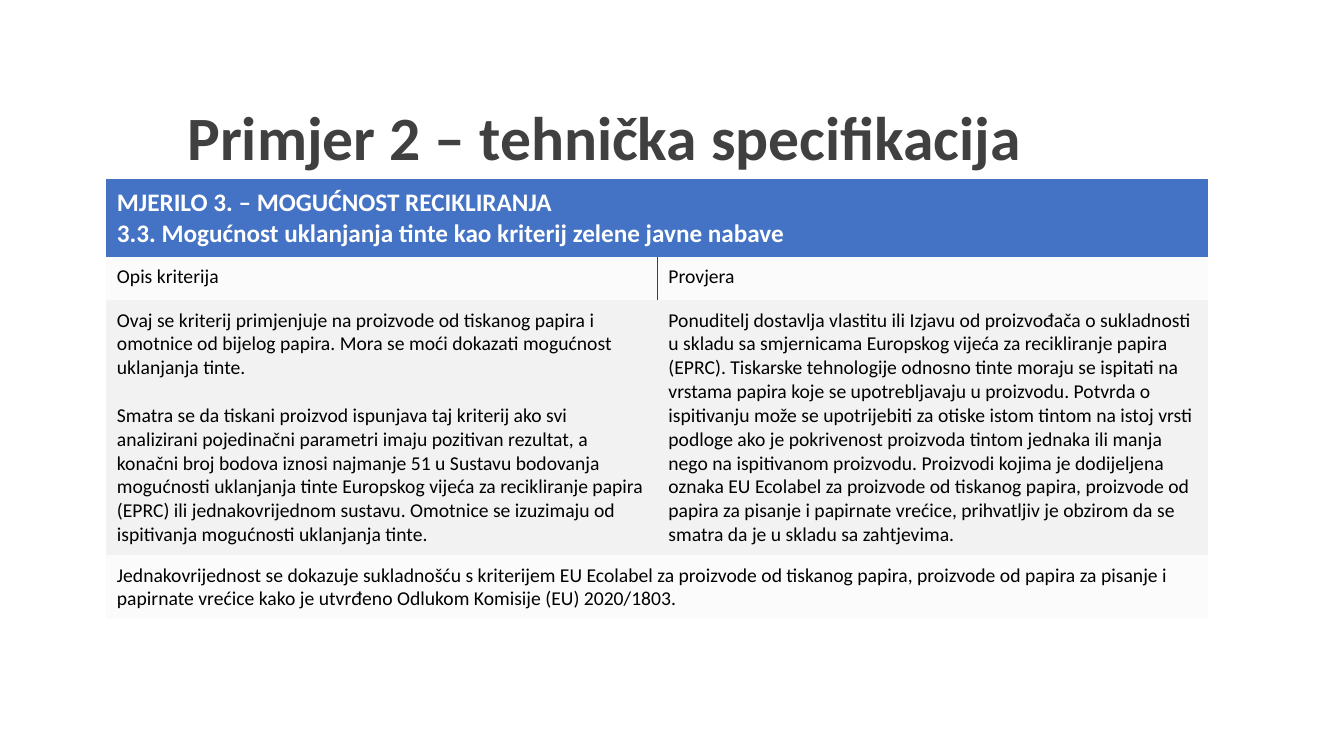
from lxml import etree
from pptx import Presentation
from pptx.dml.color import RGBColor
from pptx.enum.text import MSO_ANCHOR
from pptx.oxml.ns import qn
from pptx.util import Inches, Pt

MIDDLE, TOP = MSO_ANCHOR.MIDDLE, MSO_ANCHOR.TOP
FONT = "Calibri"
NO_GRID_STYLE = "{2D5ABB26-0587-4C30-8999-92F81FD0307C}"
COLORS = {
    "title": "404040",
    "header": "4472C4",
    "header_text": "FFFFFF",
    "band": "F2F2F2",
    "text": "000000",
    "divider": "404040",
}

# Content: each row is a list of cells, each cell a list of paragraphs
TITLE = "Primjer 2 – tehnička specifikacija"
ROWS = [
    [["MJERILO 3. – MOGUĆNOST RECIKLIRANJA",
      "3.3. Mogućnost uklanjanja tinte kao kriterij zelene javne nabave"]],
    [["Opis kriterija"], ["Provjera"]],
    [["Ovaj se kriterij primjenjuje na proizvode od tiskanog papira i omotnice "
      "od bijelog papira. Mora se moći dokazati mogućnost uklanjanja tinte.",
      "Smatra se da tiskani proizvod ispunjava taj kriterij ako svi analizirani "
      "pojedinačni parametri imaju pozitivan rezultat, a konačni broj bodova "
      "iznosi najmanje 51 u Sustavu bodovanja mogućnosti uklanjanja tinte "
      "Europskog vijeća za recikliranje papira (EPRC) ili jednakovrijednom "
      "sustavu. Omotnice se izuzimaju od ispitivanja mogućnosti uklanjanja tinte."],
     ["Ponuditelj dostavlja vlastitu ili Izjavu od proizvođača o sukladnosti u "
      "skladu sa smjernicama Europskog vijeća za recikliranje papira (EPRC). "
      "Tiskarske tehnologije odnosno tinte moraju se ispitati na vrstama papira "
      "koje se upotrebljavaju u proizvodu. Potvrda o ispitivanju može se "
      "upotrijebiti za otiske istom tintom na istoj vrsti podloge ako je "
      "pokrivenost proizvoda tintom jednaka ili manja nego na ispitivanom "
      "proizvodu. Proizvodi kojima je dodijeljena oznaka EU Ecolabel za proizvode "
      "od tiskanog papira, proizvode od papira za pisanje i papirnate vrećice, "
      "prihvatljiv je obzirom da se smatra da je u skladu sa zahtjevima."]],
    [["Jednakovrijednost se dokazuje sukladnošću s kriterijem EU Ecolabel za "
      "proizvode od tiskanog papira, proizvode od papira za pisanje i papirnate "
      "vrećice kako je utvrđeno Odlukom Komisije (EU) 2020/1803."]],
]
ROW_HEIGHTS = [0.77, 0.43, 2.53, 0.63]
COLUMN_WIDTHS = [5.47, 5.46]
# Fill, opacity in percent, text colour, size, bold, space between paragraphs
HEADER = ("header", 100, "header_text", 18, True, 0)
LIGHT = ("band", 30, "text", 14, False, 0)
BODY = ("band", 100, "text", 14, False, 17)
ROW_STYLES = [HEADER, LIGHT, BODY, LIGHT]
DIVIDED_ROW = 1


def set_font(paragraph, size, color, bold):
    font = paragraph.font
    font.name, font.size, font.bold = FONT, Pt(size), bold
    font.color.rgb = RGBColor.from_string(COLORS[color])


def fill_cell(cell, color, opacity):
    cell.fill.solid()
    cell.fill.fore_color.rgb = RGBColor.from_string(COLORS[color])
    if opacity < 100:
        tint = cell._tc.tcPr.find(qn("a:solidFill"))[0]
        etree.SubElement(tint, qn("a:alpha"), val=str(opacity * 1000))


def add_border(cell, side):
    line = etree.Element(qn(f"a:ln{side}"), w=str(Pt(0.5)))
    fill = etree.SubElement(line, qn("a:solidFill"))
    etree.SubElement(fill, qn("a:srgbClr"), val=COLORS["divider"])
    cell._tc.tcPr.insert(0, line)


def write_cell(cell, paragraphs, style):
    fill, opacity, color, size, bold, gap = style
    fill_cell(cell, fill, opacity)
    cell.margin_left = Inches(0.11)
    cell.margin_right = cell.margin_top = cell.margin_bottom = Inches(0.08)
    cell.vertical_anchor = MIDDLE if style is HEADER else TOP
    frame = cell.text_frame
    for index, text in enumerate(paragraphs):
        paragraph = frame.add_paragraph() if index else frame.paragraphs[0]
        paragraph.text = text
        set_font(paragraph, size, color, bold)
        if index:
            paragraph.space_before = Pt(gap)


presentation = Presentation()
presentation.slide_width, presentation.slide_height = Inches(13.33), Inches(7.5)
slide = presentation.slides.add_slide(presentation.slide_layouts[6])

# Title
title = slide.shapes.add_textbox(Inches(1.76), Inches(0.85), Inches(10.43), Inches(1.09))
title.text_frame.word_wrap = True
title.text_frame.vertical_anchor = MIDDLE
heading = title.text_frame.paragraphs[0]
heading.text = TITLE
heading.line_spacing = 0.9
set_font(heading, 44, "title", True)

# Table
table = slide.shapes.add_table(
    len(ROWS), len(COLUMN_WIDTHS), Inches(1.05), Inches(1.78),
    Inches(sum(COLUMN_WIDTHS)), Inches(sum(ROW_HEIGHTS))).table
table.first_row = table.horz_banding = False
table._tbl.tblPr.find(qn("a:tableStyleId")).text = NO_GRID_STYLE
for column, width in zip(table.columns, COLUMN_WIDTHS):
    column.width = Inches(width)
for row_index, (cells, style) in enumerate(zip(ROWS, ROW_STYLES)):
    table.rows[row_index].height = Inches(ROW_HEIGHTS[row_index])
    if len(cells) == 1:
        table.cell(row_index, 0).merge(table.cell(row_index, 1))
    for column_index, paragraphs in enumerate(cells):
        write_cell(table.cell(row_index, column_index), paragraphs, style)

# Divider between the two column headings
for column_index, side in enumerate("RL"):
    add_border(table.cell(DIVIDED_ROW, column_index), side)

presentation.save("out.pptx")
